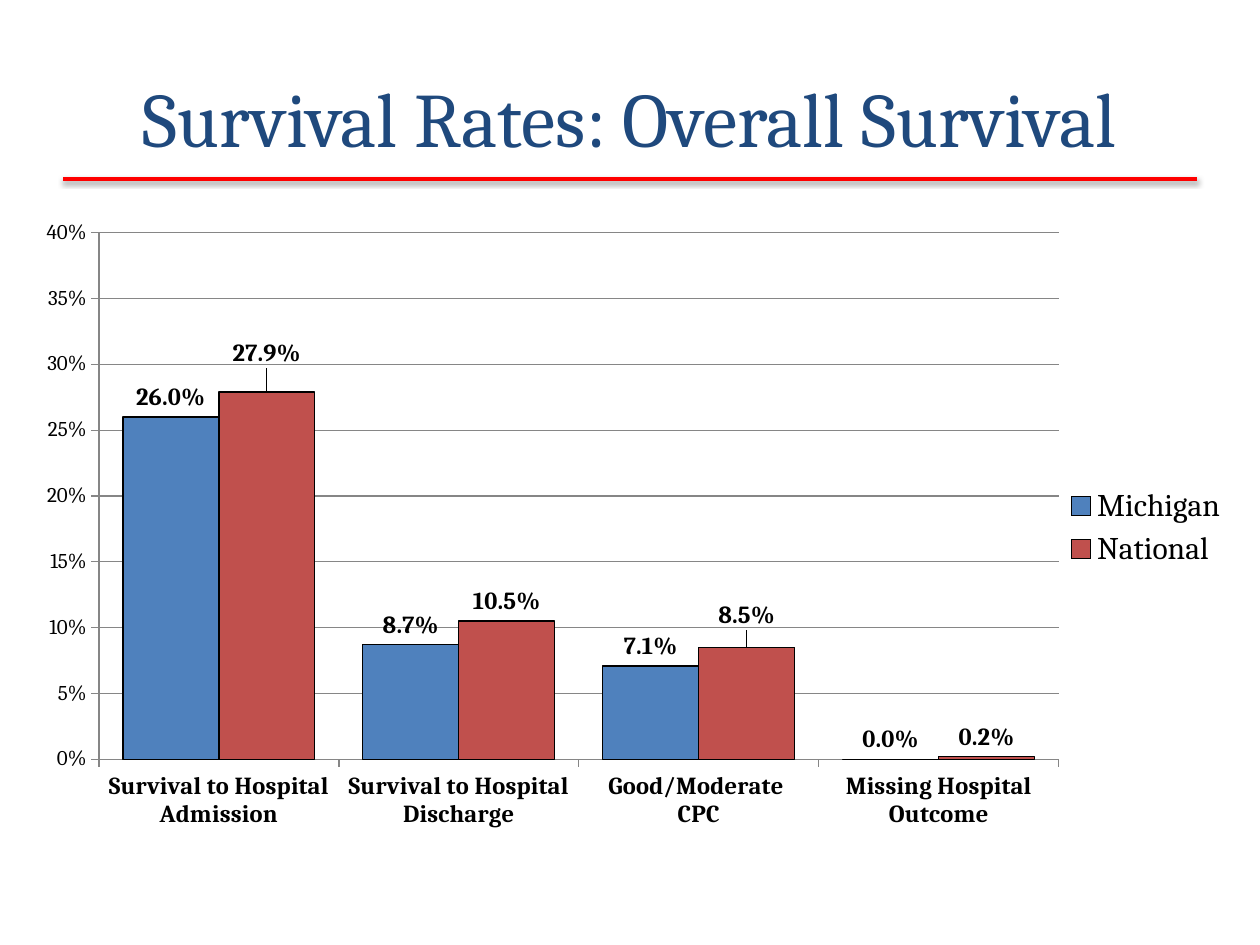
from dataclasses import dataclass, field

from lxml import etree
from pptx import Presentation
from pptx.chart.data import CategoryChartData as ChartData
from pptx.dml.color import RGBColor as Color
from pptx.enum.chart import XL_CHART_TYPE as Kind
from pptx.enum.chart import XL_LABEL_POSITION as Spot
from pptx.enum.chart import XL_LEGEND_POSITION as Side
from pptx.enum.chart import XL_TICK_MARK as Tick
from pptx.enum.shapes import MSO_CONNECTOR as Wire
from pptx.enum.text import MSO_ANCHOR as Anchor
from pptx.enum.text import PP_ALIGN as Align
from pptx.oxml import parse_xml
from pptx.oxml.ns import nsdecls, qn
from pptx.util import Emu, Pt

SCALE = 914400 / 126


@dataclass(frozen=True)
class Theme:
    font: str = "Cambria"
    title: str = "1F497D"
    rule: str = "FF0000"
    ink: str = "000000"
    grid: str = "868686"
    head: int = 44
    key: int = 18
    label: int = 14
    scale: int = 12


@dataclass(frozen=True)
class Box:
    left: int
    top: int
    width: int
    height: int

    def emu(self) -> list[Emu]:
        return [px(n) for n in (self.left, self.top, self.width, self.height)]


@dataclass(frozen=True)
class Group:
    name: str
    color: str
    rates: tuple[float, ...]
    lifts: dict[int, float] = field(default_factory=dict)


THEME = Theme()
CATS = (
    "Survival to Hospital Admission",
    "Survival to Hospital Discharge",
    "Good/Moderate \nCPC",
    "Missing Hospital Outcome",
)
GROUPS = (
    Group("Michigan", "4F81BD", (0.26, 0.087, 0.071, 0)),
    Group("National", "C0504D", (0.279, 0.105, 0.085, 0.002),
          {0: -0.03, 2: -0.02}),
)


def px(n: int) -> Emu:
    return Emu(round(n * SCALE))


def rgb(code: str) -> Color:
    return Color.from_string(code)


def style(font, size: int, color: str = THEME.ink, bold: bool = False) -> None:
    font.name = THEME.font
    font.size = Pt(size)
    font.bold = bold
    font.color.rgb = rgb(color)


def stroke(line, color: str, width: float = 0.75) -> None:
    line.color.rgb = rgb(color)
    line.width = Pt(width)


def layout(**parts: str | float):
    rows = "".join(f'<c:{tag} val="{val}"/>' for tag, val in parts.items())
    return parse_xml(
        f'<c:layout {nsdecls("c")}><c:manualLayout>{rows}'
        "</c:manualLayout></c:layout>"
    )


def draw_rule(slide, left: int, right: int, y: int) -> None:
    rule = slide.shapes.add_connector(
        Wire.STRAIGHT, px(left), px(y), px(right), px(y))
    stroke(rule.line, THEME.rule, 2)
    glow = etree.SubElement(rule._element.spPr, qn("a:effectLst"))
    shade = etree.SubElement(
        glow, qn("a:outerShdw"), blurRad=str(Pt(3.1)), dist=str(Pt(1.6)),
        dir="5400000", rotWithShape="0")
    tone = etree.SubElement(shade, qn("a:srgbClr"), val=THEME.ink)
    etree.SubElement(tone, qn("a:alpha"), val="38000")


def draw_title(slide, text: str, box: Box) -> None:
    frame = slide.shapes.add_textbox(*box.emu()).text_frame
    frame.word_wrap = True
    frame.vertical_anchor = Anchor.MIDDLE
    frame.text = text
    para = frame.paragraphs[0]
    para.alignment = Align.CENTER
    style(para.runs[0].font, THEME.head, THEME.title)


def style_bars(bars, group: Group) -> None:
    bars.format.fill.solid()
    bars.format.fill.fore_color.rgb = rgb(group.color)
    stroke(bars.format.line, THEME.ink)
    bars.invert_if_negative = False
    tags = bars.data_labels
    tags.show_value = True
    tags.number_format = "0.0%"
    tags.number_format_is_linked = False
    tags.position = Spot.OUTSIDE_END
    style(tags.font, THEME.label, bold=True)
    for spot, lift in group.lifts.items():
        tag = bars.points[spot].data_label
        tag.position = Spot.OUTSIDE_END
        style(tag.font, THEME.label, bold=True)
        node = bars._element.xpath(f"c:dLbls/c:dLbl[c:idx/@val={spot}]")[0]
        node.insert(1, layout(x=0, y=lift))


def style_axes(chart) -> None:
    cats, rates = chart.category_axis, chart.value_axis
    for axis in (cats, rates):
        axis.major_tick_mark = Tick.OUTSIDE
        axis.minor_tick_mark = Tick.NONE
        stroke(axis.format.line, THEME.grid)
    cats.has_major_gridlines = False
    style(cats.tick_labels.font, THEME.label, bold=True)
    rates.minimum_scale = 0
    rates.maximum_scale = 0.4
    rates.major_unit = 0.05
    rates.has_major_gridlines = True
    stroke(rates.major_gridlines.format.line, THEME.grid)
    rates.tick_labels.number_format = "0%"
    rates.tick_labels.number_format_is_linked = False
    style(rates.tick_labels.font, THEME.scale)


def draw_chart(slide, box: Box) -> None:
    data = ChartData(number_format="0.0%")
    data.categories = CATS
    for group in GROUPS:
        data.add_series(group.name, group.rates)
    chart = slide.shapes.add_chart(
        Kind.COLUMN_CLUSTERED, *box.emu(), data).chart
    chart.has_title = False
    style(chart.font, THEME.key)
    chart.has_legend = True
    chart.legend.position = Side.RIGHT
    chart.legend.include_in_layout = False
    style(chart.legend.font, THEME.key)
    style_axes(chart)
    plot = chart.plots[0]
    plot.gap_width = 50
    plot.overlap = 0
    plot.vary_by_categories = False
    for bars, group in zip(plot.series, GROUPS):
        style_bars(bars, group)
    area = chart._chartSpace.chart.plotArea
    for old in area.findall(qn("c:layout")):
        area.remove(old)
    area.insert(0, layout(
        layoutTarget="inner", xMode="edge", yMode="edge",
        x=0.06, y=0.03, w=0.79, h=0.84))


def main() -> None:
    deck = Presentation()
    deck.slide_width, deck.slide_height = px(1260), px(945)
    slide = deck.slides.add_slide(deck.slide_layouts[6])
    draw_rule(slide, 63, 1197, 179)
    draw_title(slide, "Survival Rates: Overall Survival",
               Box(63, 38, 1134, 158))
    draw_chart(slide, Box(26, 214, 1215, 627))
    deck.save("out.pptx")


if __name__ == "__main__":
    main()
